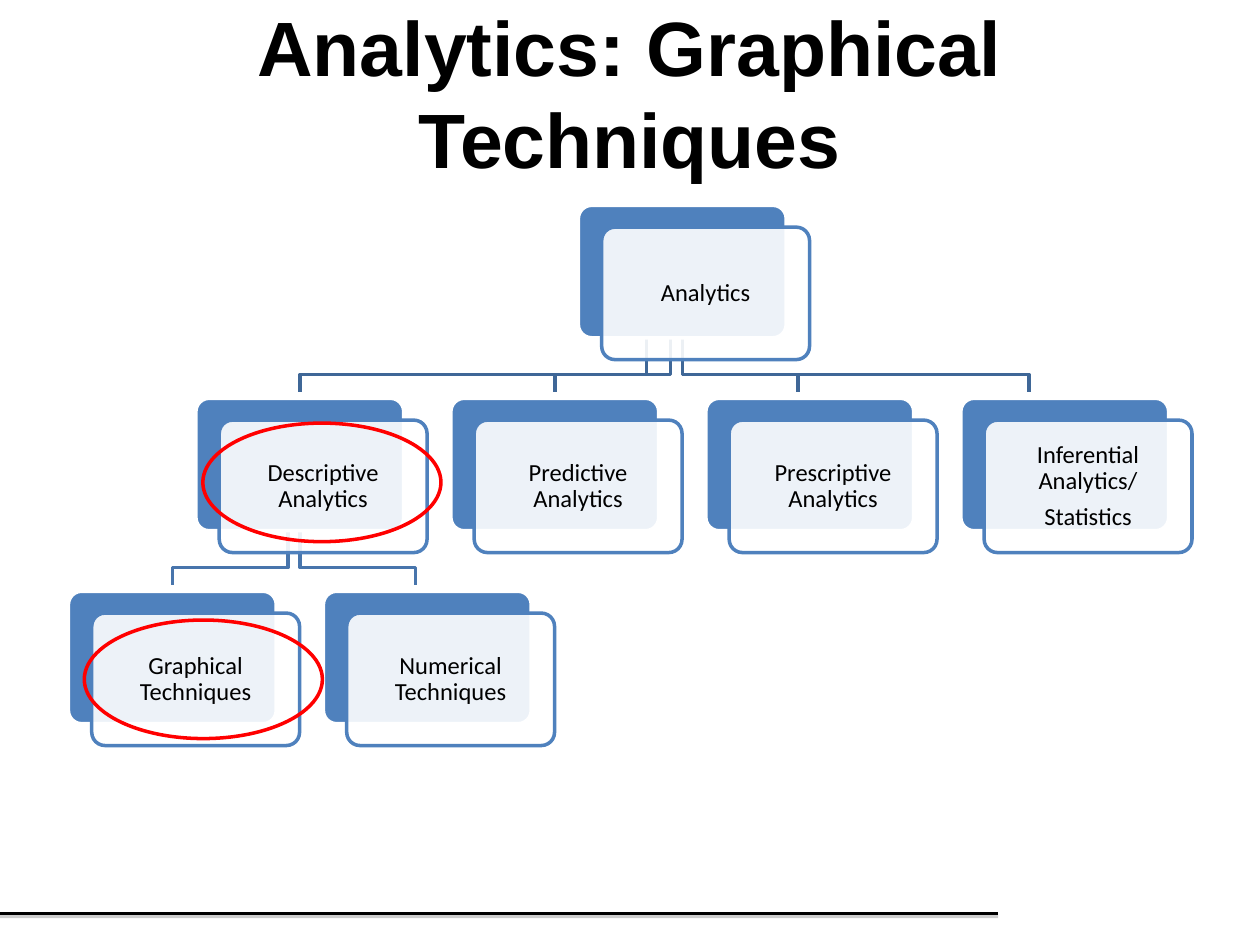
from lxml import etree
from pptx import Presentation
from pptx.dml.color import RGBColor
from pptx.enum import shapes, text
from pptx.oxml.ns import qn
from pptx.util import Cm, Pt

BLACK = RGBColor(0, 0, 0)
WHITE = RGBColor(255, 255, 255)
RED = RGBColor(255, 0, 0)
CARD_BLUE = RGBColor(0x4F, 0x81, 0xBD)
UPPER_LINK = RGBColor(0x3F, 0x67, 0x97)
LOWER_LINK = RGBColor(0x48, 0x75, 0xAC)

CARD_W, CARD_H = 4.19, 2.67
SHIFT_X, SHIFT_Y = 0.47, 0.44
COLUMN, ROW = 5.14, 3.89
BEND, DROP = 0.74, 1.09
SLANT = 0.48

NODES = {
    "Analytics": (1.5, 0),
    "Descriptive Analytics": (0, 1),
    "Graphical Techniques": (-0.5, 2),
    "Numerical Techniques": (0.5, 2),
    "Predictive Analytics": (1, 1),
    "Prescriptive Analytics": (2, 1),
    "Inferential Analytics/\nStatistics": (3, 1),
}
BRANCHES = [
    ("Analytics", UPPER_LINK,
     ["Inferential Analytics/\nStatistics", "Prescriptive Analytics",
      "Predictive Analytics", "Descriptive Analytics"]),
    ("Descriptive Analytics", LOWER_LINK,
     ["Numerical Techniques", "Graphical Techniques"]),
]


def add_title(slide, left, top, width, height):
    title = slide.shapes.add_textbox(Cm(left), Cm(top), Cm(width), Cm(height))
    frame = title.text_frame
    frame.word_wrap = True
    frame.vertical_anchor = text.MSO_ANCHOR.MIDDLE
    heading = frame.paragraphs[0]
    heading.text = "Analytics: Graphical Techniques"
    heading.alignment = text.PP_ALIGN.CENTER
    heading.font.name = "Arial"
    heading.font.size = Pt(44)
    heading.font.bold = True
    heading.font.color.rgb = BLACK


def add_footer_rule(slide, left, top, width):
    rule = slide.shapes.add_connector(
        shapes.MSO_CONNECTOR.STRAIGHT, Cm(left + width), Cm(top), Cm(left), Cm(top))
    rule.line.color.rgb = BLACK
    rule.line.width = Pt(1.75)
    effects = etree.SubElement(rule._element.spPr, qn("a:effectLst"))
    shadow = etree.SubElement(effects, qn("a:outerShdw"),
                              dist=str(Pt(1.6)), dir="5400000", rotWithShape="0")
    grey = etree.SubElement(shadow, qn("a:srgbClr"), val="808080")
    etree.SubElement(grey, qn("a:alpha"), val="38000")


def add_outlined(slide, kind, left, top, width, height, line):
    outlined = slide.shapes.add_shape(kind, Cm(left), Cm(top), Cm(width), Cm(height))
    outlined.shadow.inherit = False
    outlined.line.color.rgb = line
    outlined.line.width = Pt(2)
    return outlined


def add_branch(slide, parent_x, child_x, top, color):
    slant = (child_x - parent_x) / COLUMN * SLANT
    start, end = parent_x + min(slant, 0), child_x - max(slant, 0)
    builder = slide.shapes.build_freeform(Cm(start), Cm(top))
    builder.add_line_segments(
        [(Cm(start), Cm(top + BEND)), (Cm(end), Cm(top + BEND)),
         (Cm(end), Cm(top + DROP))], close=False)
    branch = builder.convert_to_shape()
    branch.shadow.inherit = False
    branch.fill.background()
    branch.line.color.rgb = color
    branch.line.width = Pt(2)


def add_card(slide, left, top, label):
    rounded = shapes.MSO_SHAPE.ROUNDED_RECTANGLE
    back = add_outlined(slide, rounded, left, top, CARD_W, CARD_H, WHITE)
    front = add_outlined(slide, rounded, left + SHIFT_X, top + SHIFT_Y,
                         CARD_W, CARD_H, CARD_BLUE)
    for card, fill in ((back, CARD_BLUE), (front, WHITE)):
        card.adjustments[0] = 0.1
        card.fill.solid()
        card.fill.fore_color.rgb = fill
    tint = front._element.spPr.find(qn("a:solidFill")).find(qn("a:srgbClr"))
    etree.SubElement(tint, qn("a:alpha"), val="90000")

    frame = front.text_frame
    frame.word_wrap = True
    frame.vertical_anchor = text.MSO_ANCHOR.MIDDLE
    frame.margin_left = frame.margin_right = Cm(0.15)
    frame.margin_top = frame.margin_bottom = Cm(0.15)
    frame.text = label
    for paragraph in frame.paragraphs:
        paragraph.alignment = text.PP_ALIGN.CENTER
        paragraph.line_spacing = 0.9
        paragraph.space_after = Pt(4.9)
        paragraph.font.name = "Calibri"
        paragraph.font.size = Pt(14)
        paragraph.font.color.rgb = BLACK


def add_tree(slide, left, top):
    corners = {label: (left + (column + 0.5) * COLUMN, top + row * ROW)
               for label, (column, row) in NODES.items()}
    for parent, color, children in BRANCHES:
        parent_left, parent_top = corners[parent]
        for child in children:
            add_branch(slide, parent_left + CARD_W / 2,
                       corners[child][0] + CARD_W / 2, parent_top + CARD_H, color)
    for label, corner in corners.items():
        add_card(slide, *corner, label)


def add_highlight(slide, left, top, width, height):
    ring = add_outlined(slide, shapes.MSO_SHAPE.OVAL, left, top, width, height, RED)
    ring.fill.background()


def main():
    deck = Presentation()
    deck.slide_width, deck.slide_height = Cm(25.4), Cm(19.05)
    slide = deck.slides.add_slide(deck.slide_layouts[6])
    add_footer_rule(slide, 0, 18.42, 20.12)
    add_title(slide, 1.27, 0.64, 22.86, 2.41)
    add_tree(slide, 1.38, 4.14)
    for left, top in ((4.09, 8.53), (1.7, 12.5)):
        add_highlight(slide, left, top, 4.8, 2.39)
    deck.save("out.pptx")


if __name__ == "__main__":
    main()
